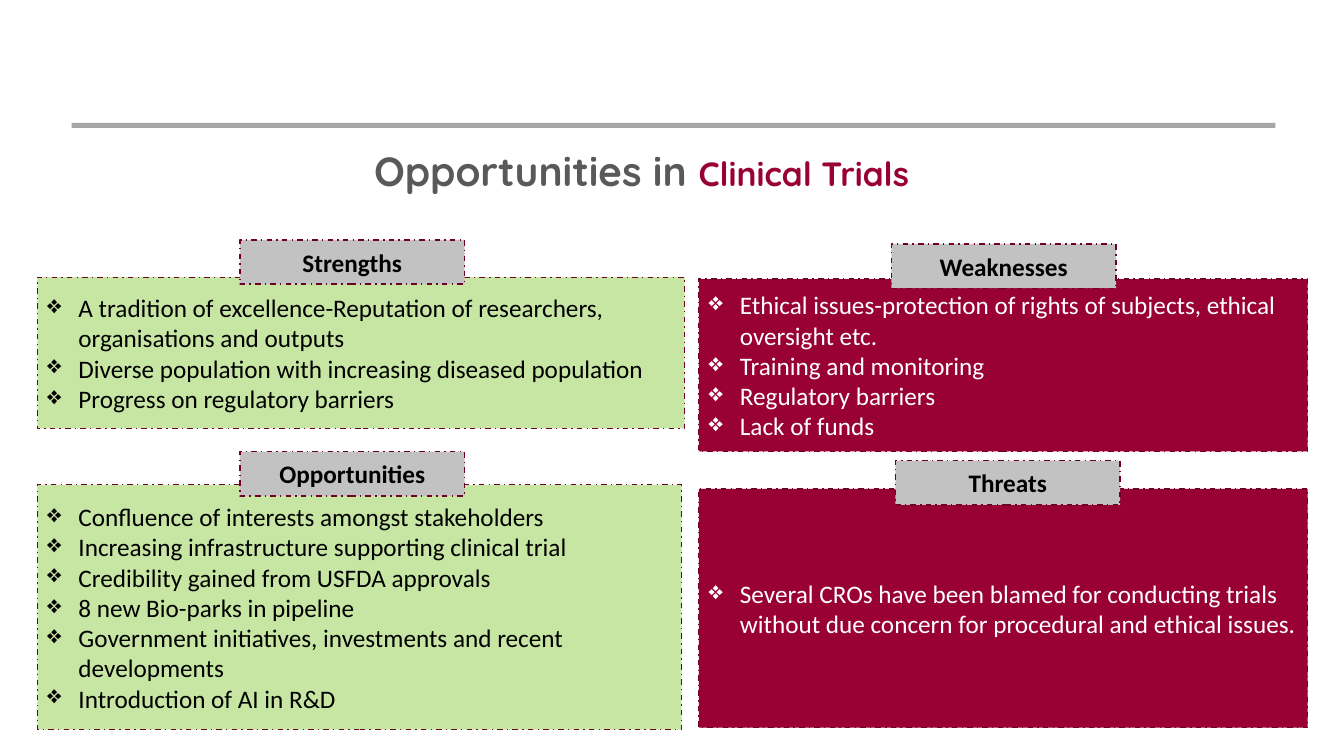
"""Build a SWOT slide on opportunities in clinical trials."""
from dataclasses import dataclass

import lxml.etree
import pptx
import pptx.dml.color
import pptx.enum.dml
import pptx.enum.shapes
import pptx.enum.text
import pptx.oxml.ns
import pptx.presentation
import pptx.shapes.autoshape
import pptx.slide
import pptx.text.text
import pptx.util

SLIDE_WIDTH = pptx.util.Inches(13.33)
SLIDE_HEIGHT = pptx.util.Inches(7.5)
BULLET_INDENT = pptx.util.Inches(0.31)
BODY_FONT = "Calibri"
TITLE_FONT = "Quicksand"
COLOURS = {
    "rule": "A6A6A6",
    "title": "595959",
    "crimson": "990033",
    "green": "C7E6A4",
    "label": "C2C2C2",
    "outline": "710026",
    "black": "000000",
    "white": "FFFFFF",
}


@dataclass(frozen=True)
class Box:
    """Hold a rectangle as percentages of the slide's width and height."""
    left: float
    top: float
    width: float
    height: float

    def lengths(self) -> tuple[int, int, int, int]:
        """Return the rectangle in drawing units."""
        return (
            round(SLIDE_WIDTH * self.left / 100),
            round(SLIDE_HEIGHT * self.top / 100),
            round(SLIDE_WIDTH * self.width / 100),
            round(SLIDE_HEIGHT * self.height / 100),
        )


@dataclass(frozen=True)
class Quadrant:
    """Describe one SWOT panel and the label over its top edge."""
    label: str
    label_left: float
    label_top: float
    panel: Box
    fill: str
    text_colour: str
    points: tuple[str, ...]


LABEL_WIDTH, LABEL_HEIGHT = 16.73, 5.87
LEFT_EDGE, RIGHT_EDGE = 2.78, 51.99
RIGHT_WIDTH = 45.31
RULE_BOX = Box(5.33, 16.27, 89.57, 0.67)
TITLE_BOX = Box(27.08, 16.8, 87.17, 12.27)

QUADRANTS = (
    Quadrant("Strengths", 17.85, 31.73, Box(LEFT_EDGE, 36.67, 48.16, 20), "green", "black", (
        "A tradition of excellence-Reputation of researchers, organisations and outputs",
        "Diverse population with increasing diseased population",
        "Progress on regulatory barriers",
    )),
    Quadrant("Weaknesses", 66.32, 32.27, Box(RIGHT_EDGE, 36.93, RIGHT_WIDTH, 22.8), "crimson", "white", (
        "Ethical issues-protection of rights of subjects, ethical oversight etc.",
        "Training and monitoring",
        "Regulatory barriers",
        "Lack of funds",
    )),
    Quadrant("Opportunities", 17.85, 59.73, Box(LEFT_EDGE, 64.13, 47.94, 32.4), "green", "black", (
        "Confluence of interests amongst stakeholders",
        "Increasing infrastructure supporting clinical trial",
        "Credibility gained from USFDA approvals",
        "8 new Bio-parks in pipeline",
        "Government initiatives, investments and recent developments",
        "Introduction of AI in R&D",
    )),
    Quadrant("Threats", 66.62, 60.93, Box(RIGHT_EDGE, 64.67, RIGHT_WIDTH, 31.6), "crimson", "white", (
        "Several CROs have been blamed for conducting trials without due concern "
        "for procedural and ethical issues.",
    )),
)


def colour(name: str) -> pptx.dml.color.RGBColor:
    """Return a named colour."""
    return pptx.dml.color.RGBColor.from_string(COLOURS[name])


def add_run(paragraph: pptx.text.text._Paragraph, text: str, font: str, size: float,
            text_colour: str, bold: bool = False) -> None:
    """Append one formatted run to a paragraph."""
    run = paragraph.add_run()
    run.text = text
    run.font.name = font
    run.font.size = pptx.util.Pt(size)
    run.font.bold = bold
    run.font.color.rgb = colour(text_colour)


def add_rectangle(slide: pptx.slide.Slide, box: Box, fill: str,
                  outlined: bool = True) -> pptx.shapes.autoshape.Shape:
    """Draw a filled rectangle, with a dash-dot outline if wanted."""
    shape = slide.shapes.add_shape(pptx.enum.shapes.MSO_SHAPE.RECTANGLE, *box.lengths())
    shape.shadow.inherit = False
    shape.fill.solid()
    shape.fill.fore_color.rgb = colour(fill)
    if outlined:
        shape.line.color.rgb = colour("outline")
        shape.line.width = pptx.util.Pt(1)
        shape.line.dash_style = pptx.enum.dml.MSO_LINE.DASH_DOT
    else:
        shape.line.fill.background()
    shape.text_frame.word_wrap = True
    shape.text_frame.vertical_anchor = pptx.enum.text.MSO_ANCHOR.MIDDLE
    return shape


def add_bullet(paragraph: pptx.text.text._Paragraph) -> None:
    """Give a paragraph a hanging diamond bullet."""
    properties = paragraph._p.get_or_add_pPr()
    properties.set("marL", str(BULLET_INDENT))
    properties.set("indent", str(-BULLET_INDENT))
    bullet = lxml.etree.SubElement(properties, pptx.oxml.ns.qn("a:buChar"))
    bullet.set("char", "❖")


def add_quadrant(slide: pptx.slide.Slide, quadrant: Quadrant) -> None:
    """Draw a panel with its bulleted points and its label."""
    text_frame = add_rectangle(slide, quadrant.panel, quadrant.fill).text_frame
    for index, point in enumerate(quadrant.points):
        paragraph = text_frame.add_paragraph() if index else text_frame.paragraphs[0]
        paragraph.alignment = pptx.enum.text.PP_ALIGN.LEFT
        add_bullet(paragraph)
        add_run(paragraph, point, BODY_FONT, 18, quadrant.text_colour)

    label_box = Box(quadrant.label_left, quadrant.label_top, LABEL_WIDTH, LABEL_HEIGHT)
    paragraph = add_rectangle(slide, label_box, "label").text_frame.paragraphs[0]
    paragraph.alignment = pptx.enum.text.PP_ALIGN.CENTER
    add_run(paragraph, quadrant.label, BODY_FONT, 18, "black", bold=True)


def format_title(slide: pptx.slide.Slide) -> None:
    """Place the title and write its two runs."""
    title = slide.shapes.title
    title.left, title.top, title.width, title.height = TITLE_BOX.lengths()
    title.text_frame.auto_size = pptx.enum.text.MSO_AUTO_SIZE.NONE
    title.text_frame.vertical_anchor = pptx.enum.text.MSO_ANCHOR.MIDDLE
    paragraph = title.text_frame.paragraphs[0]
    paragraph.alignment = pptx.enum.text.PP_ALIGN.LEFT
    paragraph.line_spacing = 0.9
    add_run(paragraph, "Opportunities in ", TITLE_FONT, 29, "title", bold=True)
    add_run(paragraph, "Clinical Trials", TITLE_FONT, 24, "crimson", bold=True)


def main() -> None:
    """Build and save the presentation."""
    presentation = pptx.Presentation()
    presentation.slide_width = SLIDE_WIDTH
    presentation.slide_height = SLIDE_HEIGHT
    slide = presentation.slides.add_slide(presentation.slide_layouts[5])
    format_title(slide)
    add_rectangle(slide, RULE_BOX, "rule", outlined=False)
    for quadrant in QUADRANTS:
        add_quadrant(slide, quadrant)
    presentation.save("out.pptx")


if __name__ == "__main__":
    main()
